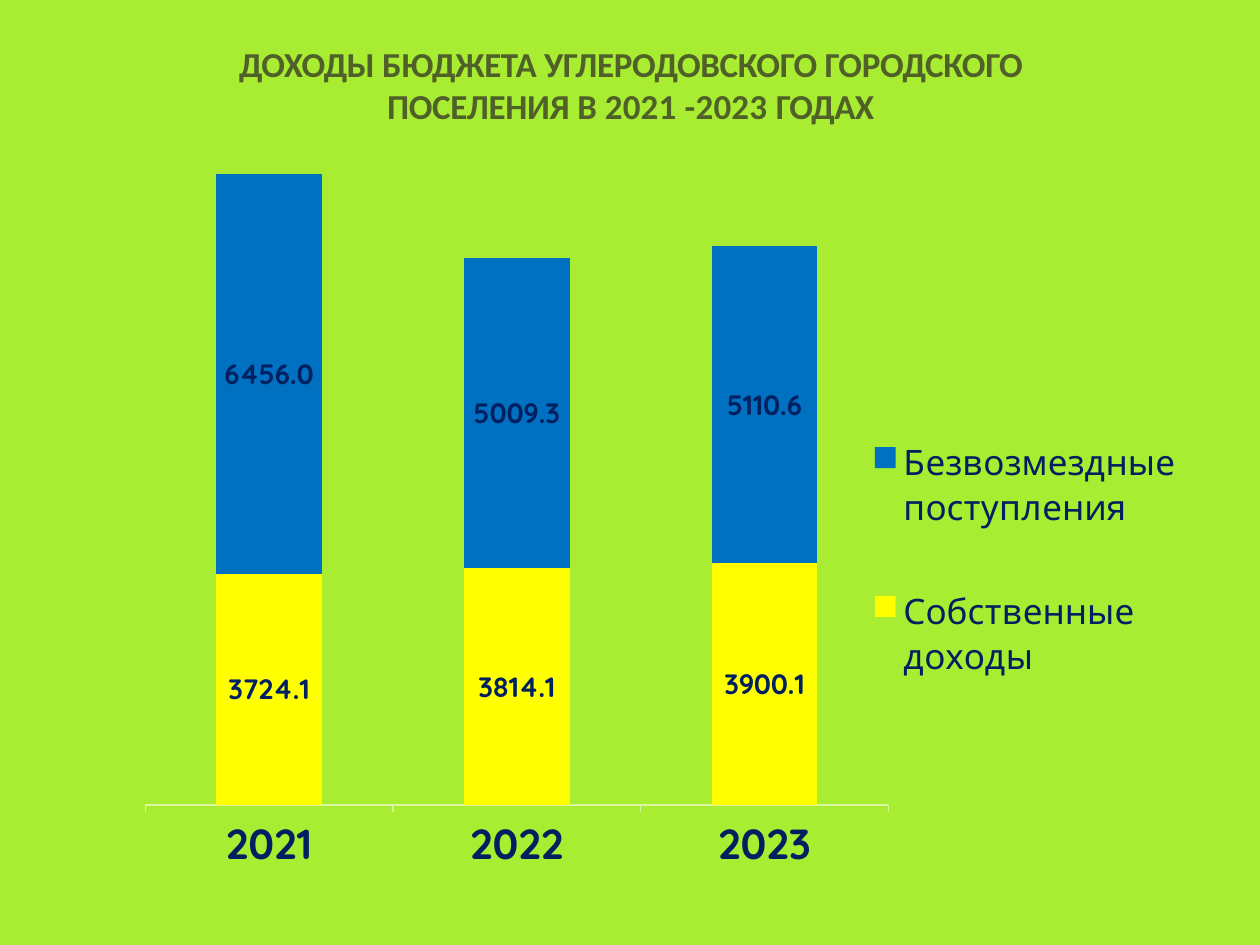
"""Builds a slide with a stacked column chart of settlement budget income."""
from dataclasses import dataclass

from lxml.etree import SubElement
from pptx import Presentation
from pptx.chart.data import CategoryChartData
from pptx.dml.color import RGBColor
from pptx.enum.chart import XL_CHART_TYPE as ChartType
from pptx.enum.chart import XL_LEGEND_POSITION as LegendPosition
from pptx.enum.chart import XL_TICK_MARK as TickMark
from pptx.enum.shapes import MSO_SHAPE as ShapeKind
from pptx.enum.text import PP_ALIGN as Align
from pptx.oxml.ns import qn
from pptx.util import Inches, Pt

GREEN, OLIVE, NAVY, PALE = "A8ED31", "4F6128", "002060", "D9F7A0"
CHART_FONT = "Quicksand"


@dataclass
class Income:
    name: str
    values: tuple[float, ...]
    fill: str


@dataclass
class Span:
    text: str
    spacing: float


YEARS = ("2021", "2022", "2023")
INCOMES = (
    Income("Собственные доходы", (3724.1, 3814.1, 3900.1), "FFFF00"),
    Income("Безвозмездные поступления", (6456.0, 5009.3, 5110.6), "0070C0"),
)
TITLE = (
    Span("ДОХОДЫ ", -0.3),
    Span("БЮДЖЕТА УГЛЕРОДОВСКОГО ГОРОДСКОГО ПОСЕЛЕНИЯ ", -0.2),
    Span("В ", 0),
    Span("2021 -2023 ", 0.1),
    Span("ГОДАХ", -0.4),
)


def color(value: str) -> RGBColor:
    return RGBColor.from_string(value)


def format_font(font, *, size: float, fill: str, name: str = CHART_FONT, bold: bool = False) -> None:
    font.name, font.size, font.bold = name, Pt(size), bold
    font.color.rgb = color(fill)


def add_text(paragraph, text: str, *, spacing: float = 0, **font_format) -> None:
    run = paragraph.add_run()
    run.text = text
    format_font(run.font, **font_format)
    run.font._element.set("spc", str(round(spacing * 100)))


def add_backdrop(slide, width: int, height: int) -> None:
    shape = slide.shapes.add_shape(ShapeKind.RECTANGLE, 0, 0, width, height)
    shape.shadow.inherit = False
    shape.fill.solid()
    shape.fill.fore_color.rgb = color(GREEN)
    shape.line.fill.background()


def add_title(slide, spans: tuple[Span, ...]) -> None:
    box = slide.shapes.add_textbox(Inches(1.37), Inches(0.33), Inches(7.27), Inches(0.69))
    frame = box.text_frame
    frame.word_wrap = True
    frame.margin_left = frame.margin_right = frame.margin_bottom = 0
    frame.margin_top = Inches(0.01)
    paragraph = frame.paragraphs[0]
    paragraph.alignment = Align.CENTER
    for span in spans:
        add_text(paragraph, span.text, spacing=span.spacing,
                 size=20, fill=OLIVE, name="Calibri", bold=True)


def set_layout(parent, x: float, y: float, width: float, height: float, inner: bool = False) -> None:
    layout = parent.get_or_add_layout() if hasattr(parent, "get_or_add_layout") else parent.find(qn("c:layout"))
    if layout is None:
        layout = parent.makeelement(qn("c:layout"))
        parent.insert(0, layout)
    for child in list(layout):
        layout.remove(child)
    manual = SubElement(layout, qn("c:manualLayout"))
    settings = [("layoutTarget", "inner")] if inner else []
    settings += [("xMode", "edge"), ("yMode", "edge"), ("x", x), ("y", y), ("w", width), ("h", height)]
    for tag, value in settings:
        SubElement(manual, qn(f"c:{tag}")).set("val", str(value))


def style_series(series, income: Income) -> None:
    series.format.fill.solid()
    series.format.fill.fore_color.rgb = color(income.fill)
    labels = series.data_labels
    labels.show_value = True
    labels.number_format, labels.number_format_is_linked = "0.0", False
    format_font(labels.font, size=16, fill=NAVY, bold=True)


def style_axes(chart) -> None:
    value_axis, category_axis = chart.value_axis, chart.category_axis
    value_axis.visible = value_axis.has_major_gridlines = False
    value_axis.minimum_scale, value_axis.maximum_scale = 0, 10260
    category_axis.major_tick_mark = TickMark.OUTSIDE
    category_axis.format.line.color.rgb = color(PALE)
    category_axis.format.line.width = Pt(0.75)
    format_font(category_axis.tick_labels.font, size=24, fill=NAVY, bold=True)


def add_income_chart(slide, years: tuple[str, ...], incomes: tuple[Income, ...]) -> None:
    data = CategoryChartData(number_format="0.0")
    data.categories = years
    for income in incomes:
        data.add_series(income.name, income.values)
    chart = slide.shapes.add_chart(ChartType.COLUMN_STACKED, Inches(0.75), Inches(1.07),
                                   Inches(8.74), Inches(5.91), data).chart
    chart.has_title = False
    format_font(chart.font, size=9.7, fill="FFFFFF")
    plot = chart.plots[0]
    plot.gap_width, plot.overlap, plot.vary_by_categories = 134, 100, False
    for series, income in zip(plot.series, incomes):
        style_series(series, income)
    style_axes(chart)
    chart.has_legend = True
    legend = chart.legend
    legend.position, legend.include_in_layout = LegendPosition.RIGHT, False
    format_font(legend.font, size=20, fill=NAVY)
    set_layout(legend._element, 0.7, 0.33, 0.29, 0.48)
    set_layout(chart._chartSpace.chart.plotArea, 0.046, 0.046, 0.675, 0.854, inner=True)


def main() -> None:
    presentation = Presentation()
    presentation.slide_width, presentation.slide_height = Inches(10), Inches(7.5)
    slide = presentation.slides.add_slide(presentation.slide_layouts[6])
    add_backdrop(slide, presentation.slide_width, presentation.slide_height)
    add_title(slide, TITLE)
    add_income_chart(slide, YEARS, INCOMES)
    presentation.save("out.pptx")


if __name__ == "__main__":
    main()
